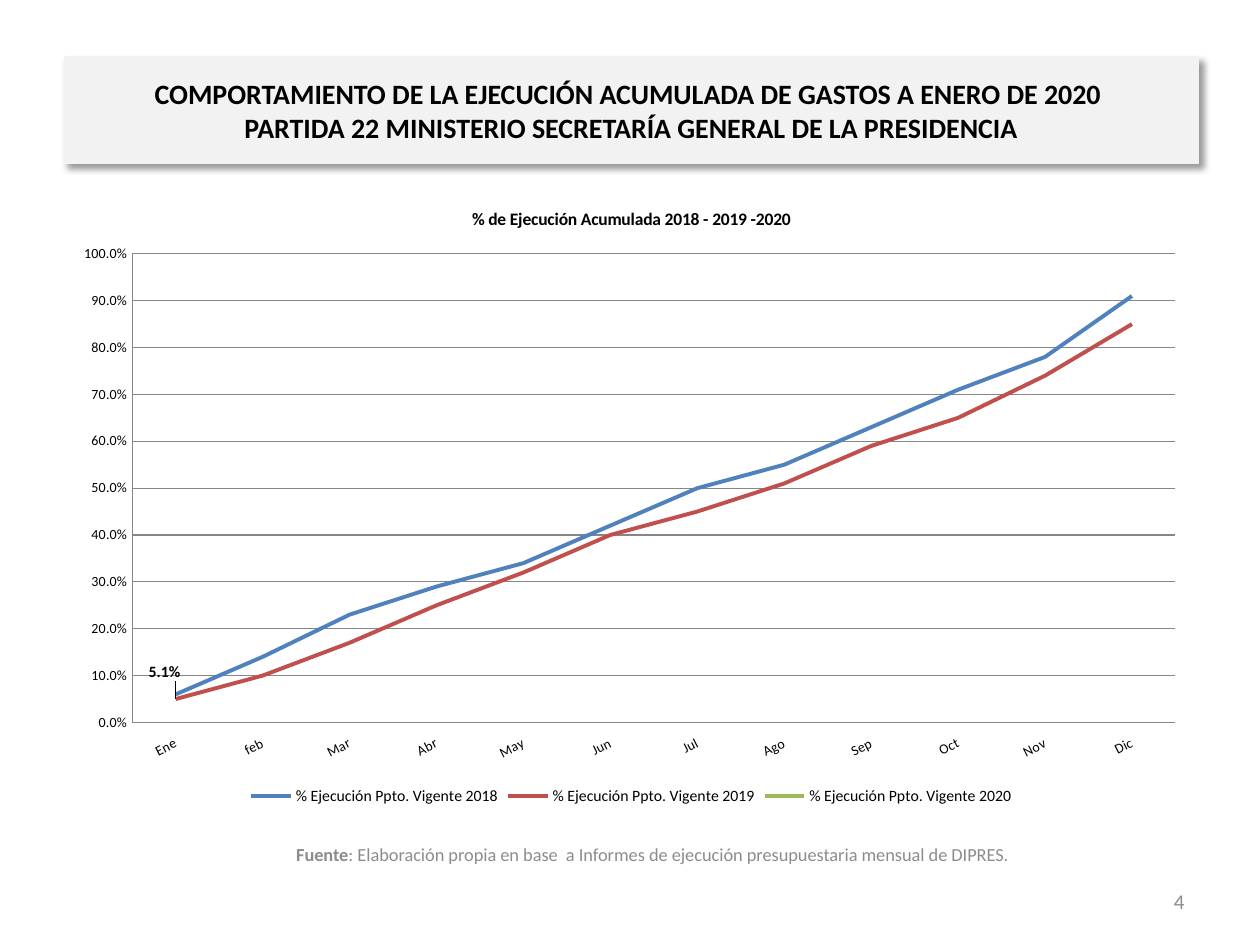
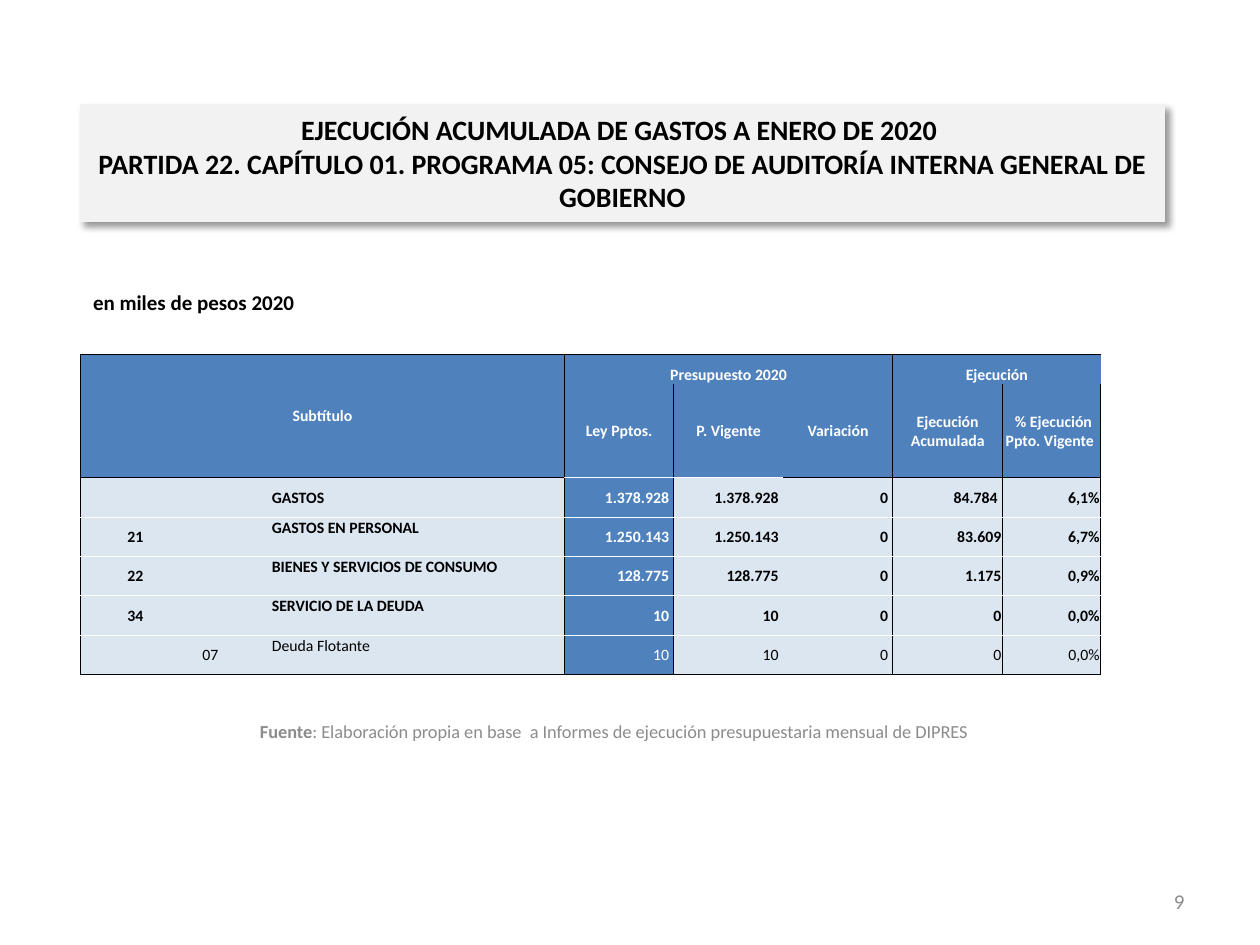
from lxml.etree import SubElement
from pptx import Presentation
from pptx.chart.data import CategoryChartData
from pptx.dml.color import RGBColor
from pptx.enum.chart import XL_CHART_TYPE as Kind, XL_LABEL_POSITION as Spot
from pptx.enum.chart import XL_LEGEND_POSITION as Place, XL_TICK_LABEL_POSITION as Tags
from pptx.enum.chart import XL_TICK_MARK as Tick
from pptx.enum.shapes import MSO_SHAPE as Form
from pptx.enum.text import MSO_ANCHOR as Anchor, PP_ALIGN as Align
from pptx.oxml import parse_xml
from pptx.oxml.ns import nsdecls, qn
from pptx.util import Pt

FONT = "Calibri"
BLACK = RGBColor(0x00, 0x00, 0x00)
WHITE = RGBColor(0xFF, 0xFF, 0xFF)
BAND = RGBColor(0xF2, 0xF2, 0xF2)
GRAY = RGBColor(0x8C, 0x8C, 0x8C)
RULE = RGBColor(0x86, 0x86, 0x86)
BLUE = RGBColor(0x4F, 0x81, 0xBD)
RED = RGBColor(0xC0, 0x50, 0x4D)
GREEN = RGBColor(0x9B, 0xBB, 0x59)
PALE = RGBColor(0xDC, 0xE6, 0xF1)

SOURCE = ": Elaboración propia en base  a Informes de ejecución presupuestaria mensual de DIPRES"

TREND = {
    "title": ["COMPORTAMIENTO DE LA EJECUCIÓN ACUMULADA DE GASTOS A ENERO DE 2020 ",
              "PARTIDA 22 MINISTERIO SECRETARÍA GENERAL DE LA PRESIDENCIA"],
    "band": (36.7, 32.5, 648, 61),
    "source": SOURCE + ".",
    "foot": (76.3, 473.8, 593.3, 28.8),
    "page": "4",
}
BUDGET = {
    "title": ["EJECUCIÓN ACUMULADA DE GASTOS A ENERO DE 2020 ",
              "PARTIDA 22. CAPÍTULO 01. PROGRAMA 05: CONSEJO DE AUDITORÍA "
              "INTERNA GENERAL DE GOBIERNO"],
    "band": (46.1, 60, 619.2, 66.5),
    "source": SOURCE,
    "foot": (46.1, 400.5, 609.8, 34.5),
    "page": "9",
}

MONTHS = ["Ene", "feb", "Mar", "Abr", "May", "Jun",
          "Jul", "Ago", "Sep", "Oct", "Nov", "Dic"]
LINES = [
    ("% Ejecución Ppto. Vigente 2018", BLUE,
     [0.06, 0.14, 0.23, 0.29, 0.34, 0.42, 0.5, 0.55, 0.63, 0.71, 0.78, 0.91]),
    ("% Ejecución Ppto. Vigente 2019", RED,
     [0.05, 0.1, 0.17, 0.25, 0.32, 0.4, 0.45, 0.51, 0.59, 0.65, 0.74, 0.85]),
    ("% Ejecución Ppto. Vigente 2020", GREEN, [0.051]),
]

WIDTHS = [62.6, 23, 23, 167.8, 62.6, 62.6, 62.6, 62.6, 56.2]
HEIGHTS = [17.3, 53.3] + [22.5] * 5
MERGES = [(0, 0, 1, 3), (0, 4, 0, 6), (0, 7, 0, 8)]
EDGES = {0, 4, 7, 9}
AMOUNT = 4
GRID = [
    ["Subtítulo", "", "", "", "Presupuesto 2020", "", "", "Ejecución", ""],
    ["", "", "", "", "Ley Pptos.", "P. Vigente", "Variación",
     "Ejecución Acumulada", " % Ejecución Ppto. Vigente "],
    ["", "", "", "GASTOS", "1.378.928 ", "1.378.928 ", "0 ", "84.784 ", "6,1%"],
    ["21", "", "", "GASTOS EN PERSONAL", "1.250.143 ", "1.250.143 ", "0 ", "83.609", "6,7%"],
    ["22", "", "", "BIENES Y SERVICIOS DE CONSUMO", "128.775 ", "128.775 ", "0 ",
     "1.175", "0,9%"],
    ["34", "", "", "SERVICIO DE LA DEUDA", "10 ", "10 ", "0 ", "0", "0,0%"],
    ["", "07", "", "Deuda Flotante", "10 ", "10 ", "0 ", "0", "0,0%"],
]
HEADS = 2
PLAIN = "{2D5ABB26-0587-4C30-8999-92F81FD0307C}"


def style(font, size, color=BLACK, bold=False):
    font.name, font.size, font.bold = FONT, Pt(size), bold
    font.color.rgb = color


def write(para, text, size, color=BLACK, bold=False):
    run = para.add_run()
    run.text = text
    style(run.font, size, color, bold)


def add_text(slide, box, runs, size, color, align, anchor=Anchor.MIDDLE):
    frame = slide.shapes.add_textbox(*map(Pt, box)).text_frame
    frame.word_wrap, frame.vertical_anchor = True, anchor
    para = frame.paragraphs[0]
    para.alignment = align
    for text, bold in runs:
        write(para, text, size, color, bold)


def add_band(slide, box, lines):
    band = slide.shapes.add_shape(Form.RECTANGLE, *map(Pt, box))
    band.fill.solid()
    band.fill.fore_color.rgb = band.line.color.rgb = BAND
    band.line.width = Pt(0.75)
    band.shadow.inherit = False
    glow = band.element.spPr.find(qn("a:effectLst"))
    glow.append(parse_xml(
        f'<a:outerShdw {nsdecls("a")} blurRad="{Pt(4)}" dist="{Pt(3)}" dir="2700000" '
        'algn="tl" rotWithShape="0"><a:srgbClr val="000000">'
        '<a:alpha val="40000"/></a:srgbClr></a:outerShdw>'))
    frame = band.text_frame
    frame.word_wrap, frame.vertical_anchor = True, Anchor.MIDDLE
    frame.margin_left = frame.margin_right = Pt(7.9)
    para = frame.paragraphs[0]
    para.alignment = Align.CENTER
    for i, line in enumerate(lines):
        if i:
            para.add_line_break()
        write(para, line, 16, bold=True)


def add_base(deck, page):
    """Add a slide with the title band, source note and page number."""
    slide = deck.slides.add_slide(deck.slide_layouts[6])
    add_band(slide, page["band"], page["title"])
    add_text(slide, page["foot"], [("Fuente", True), (page["source"], False)],
             10.5, GRAY, Align.CENTER)
    add_text(slide, (516.2, 500.4, 167.8, 28.8), [(page["page"], False)],
             12, GRAY, Align.RIGHT)
    return slide


def layout(**parts):
    """Build a manual chart layout from name and value pairs."""
    inner = "".join(f'<c:{key} val="{val}"/>' for key, val in parts.items())
    return parse_xml(f'<c:layout {nsdecls("c")}><c:manualLayout>{inner}'
                     '</c:manualLayout></c:layout>')


def set_axis(axis):
    style(axis.tick_labels.font, 8)
    axis.major_tick_mark = axis.minor_tick_mark = Tick.NONE
    axis.format.line.color.rgb = RULE


def add_trend(slide):
    data = CategoryChartData(number_format="0.0%")
    data.categories = MONTHS
    for name, _, vals in LINES:
        data.add_series(name, vals + [None] * (len(MONTHS) - len(vals)))
    chart = slide.shapes.add_chart(
        Kind.LINE, Pt(36.7), Pt(105.8), Pt(648), Pt(357.1), data).chart
    style(chart.font, 10)
    chart.has_title = True
    write(chart.chart_title.text_frame.paragraphs[0],
          "% de Ejecución Acumulada 2018 - 2019 -2020", 10, bold=True)
    chart.has_legend = True
    chart.legend.position = Place.BOTTOM
    chart.legend.include_in_layout = False
    style(chart.legend.font, 9)

    months, share = chart.category_axis, chart.value_axis
    set_axis(months)
    set_axis(share)
    months.tick_label_position = Tags.LOW
    months.tick_labels.font  # text properties exist before the turn
    turn = months._element.find(qn("c:txPr")).find(qn("a:bodyPr"))
    turn.set("rot", "-1620000")
    turn.set("vert", "horz")
    share.minimum_scale, share.maximum_scale, share.major_unit = 0, 1, 0.1
    share.tick_labels.number_format = "0.0%"
    share.tick_labels.number_format_is_linked = False
    share.major_gridlines.format.line.color.rgb = RULE

    plot = chart.plots[0]
    plot.vary_by_categories = False
    for line, (_, color, _) in zip(plot.series, LINES):
        line.smooth = False
        line.format.line.color.rgb = color
        line.format.line.width = Pt(2.25)
    labels = line.data_labels
    labels.show_value = True
    labels.number_format, labels.number_format_is_linked = "0.0%", False
    style(labels.font, 9, bold=True)
    label = line.points[0].data_label
    style(label.font, 9, bold=True)
    label.position = Spot.ABOVE
    mark = labels._element.find(qn("c:dLbl"))
    mark.insert(1, layout(x=-0.01, y=-0.02))

    area = chart.element.find(".//" + qn("c:plotArea"))
    for old in area.findall(qn("c:layout")):
        area.remove(old)
    area.insert(0, layout(layoutTarget="inner", xMode="edge", yMode="edge",
                          x=0.06, y=0.11, w=0.92, h=0.75))


def set_edges(cell, edges):
    """Draw cell borders, given as tag and colour pairs in schema order."""
    props = cell._tc.get_or_add_tcPr()
    for i, (tag, color) in enumerate(edges):
        line = SubElement(props, qn("a:" + tag), w=str(Pt(0.5)))
        fill = SubElement(line, qn("a:solidFill"))
        SubElement(fill, qn("a:srgbClr"), val=str(color))
        props.insert(i, line)


def find_edges(row, col):
    """Black frames each column group and the header, white parts the rows."""
    edges = [(tag, BLACK) for tag, side in (("lnL", col), ("lnR", col + 1)) if side in EDGES]
    for tag, side in (("lnT", row), ("lnB", row + 1)):
        if side in (0, len(GRID)):
            edges.append((tag, BLACK))
        elif side == HEADS:
            edges.append((tag, WHITE if col in (4, 5) else BLACK))
        elif side > HEADS:
            edges.append((tag, WHITE))
    return edges


def add_budget(slide):
    table = slide.shapes.add_table(
        len(GRID), len(WIDTHS), Pt(46.1), Pt(202.3), Pt(sum(WIDTHS)), Pt(sum(HEIGHTS))).table
    table.first_row = table.horz_banding = False
    table._tbl.tblPr.find(qn("a:tableStyleId")).text = PLAIN
    for col, width in zip(table.columns, WIDTHS):
        col.width = Pt(width)
    for row, height in zip(table.rows, HEIGHTS):
        row.height = Pt(height)
    for r, texts in enumerate(GRID):
        for c, text in enumerate(texts):
            cell = table.cell(r, c)
            dark = r < HEADS or c == AMOUNT
            cell.fill.solid()
            cell.fill.fore_color.rgb = BLUE if dark else PALE
            cell.margin_left = cell.margin_right = cell.margin_top = Pt(0.7)
            cell.margin_bottom = 0
            cell.vertical_anchor = Anchor.MIDDLE
            if r == 0 and c >= AMOUNT:
                cell.vertical_anchor = Anchor.BOTTOM
            elif r > HEADS and c == 3:
                cell.vertical_anchor = Anchor.TOP
            set_edges(cell, find_edges(r, c))
            if text:
                para = cell.text_frame.paragraphs[0]
                para.alignment = (Align.CENTER if r < HEADS or c < 3
                                  else Align.JUSTIFY if c == 3 else Align.RIGHT)
                write(para, text, 9, WHITE if dark else BLACK, r < len(GRID) - 1)
    for top, left, low, right in MERGES:
        table.cell(top, left).merge(table.cell(low, right))


def main():
    deck = Presentation()
    deck.slide_width, deck.slide_height = Pt(720), Pt(540)
    add_trend(add_base(deck, TREND))
    slide = add_base(deck, BUDGET)
    add_text(slide, (46.1, 162, 619.2, 23.8), [("en miles de pesos 2020", True)],
             12, BLACK, Align.LEFT, Anchor.TOP)
    add_budget(slide)
    deck.save("out.pptx")


if __name__ == "__main__":
    main()
